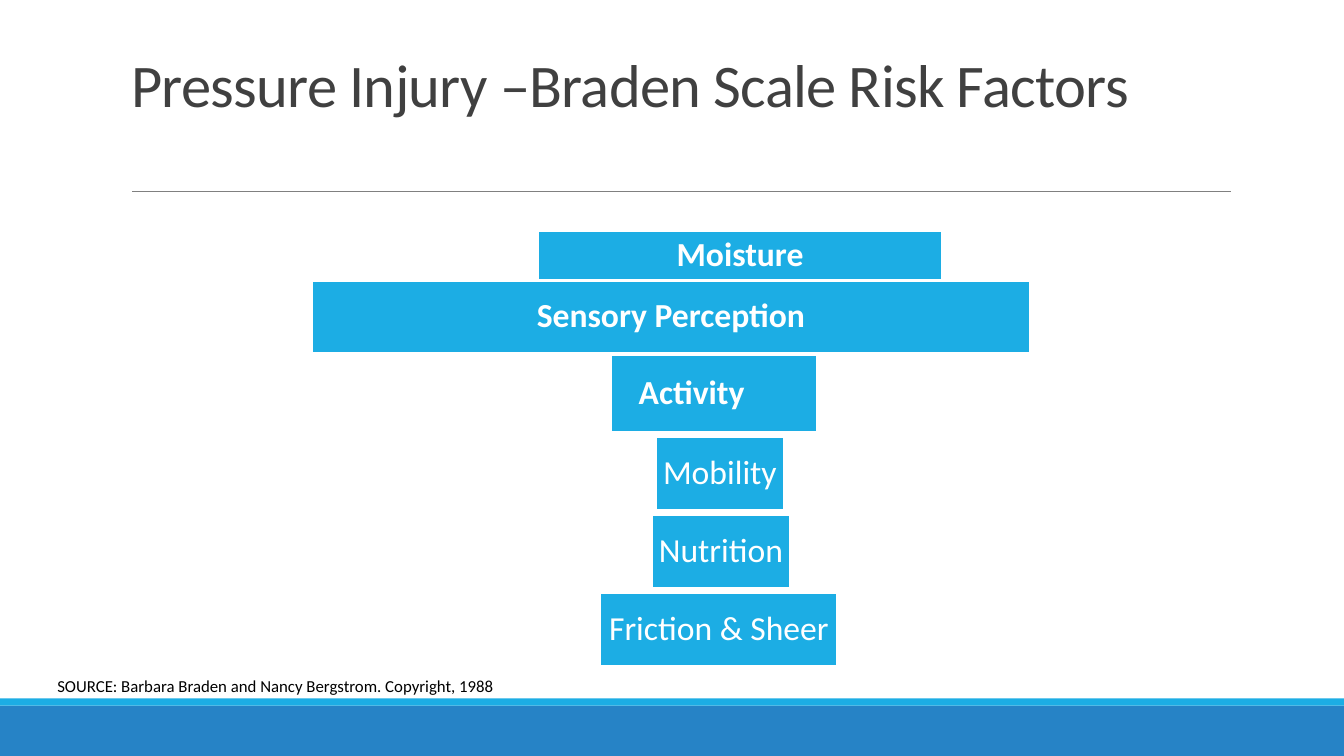
"""Build the Braden Scale risk factor slide."""
from dataclasses import dataclass

import pptx
import pptx.dml.color
import pptx.enum.shapes
import pptx.enum.text
import pptx.oxml
import pptx.oxml.ns
import pptx.util

Inches = pptx.util.Inches
Pt = pptx.util.Pt
RGB = pptx.dml.color.RGBColor.from_string
ALIGN = pptx.enum.text.PP_ALIGN
ANCHOR = pptx.enum.text.MSO_ANCHOR
RECT = pptx.enum.shapes.MSO_SHAPE.RECTANGLE


@dataclass(frozen=True)
class Theme:
    font: str = "Calibri"
    accent: str = "1CADE4"
    band: str = "2683C6"
    rule: str = "808080"
    title: str = "404040"
    white: str = "FFFFFF"
    black: str = "000000"
    title_size: float = 43.2
    factor_size: float = 24
    source_size: float = 12


@dataclass(frozen=True)
class Factor:
    label: str
    left: float
    top: float
    width: float
    height: float = 0.73
    bold: bool = False


@dataclass(frozen=True)
class Band:
    top: float
    height: float
    color: str


THEME = Theme()
BANDS = [Band(7, 0.5, THEME.band), Band(6.93, 0.07, THEME.accent)]
FACTORS = [
    Factor("Moisture", 5.33, 2.29, 4.02, 0.5, bold=True),
    Factor("Sensory Perception", 3.09, 2.78, 7.13, bold=True),
    Factor("Activity\t", 6.06, 3.52, 2.05, 0.77, bold=True),
    Factor("Mobility", 6.5, 4.33, 1.28),
    Factor("Nutrition", 6.46, 5.11, 1.38),
    Factor("Friction & Sheer", 5.95, 5.88, 2.36),
]


def apply(target: object, values: dict) -> None:
    for name, value in values.items():
        setattr(target, name, value)


def write(sp, text: str, size: float, color: str, frame: dict, para: dict, bold: bool = False):
    tf = sp.text_frame
    apply(tf, {"word_wrap": True, **frame})
    p = tf.paragraphs[0]
    apply(p, para)
    r = p.add_run()
    r.text = text
    apply(r.font, {"name": THEME.font, "size": Pt(size), "bold": bold})
    r.font.color.rgb = RGB(color)
    return r


def add_rect(slide, left: float, top: float, width: float, height: float, color: str):
    sp = slide.shapes.add_shape(RECT, Inches(left), Inches(top), Inches(width), Inches(height))
    sp.shadow.inherit = False
    sp.fill.solid()
    sp.fill.fore_color.rgb = RGB(color)
    sp.line.fill.background()
    return sp


def add_rule(slide) -> None:
    line = slide.shapes.add_connector(
        pptx.enum.shapes.MSO_CONNECTOR.STRAIGHT, Inches(1.31), Inches(1.9), Inches(12.21), Inches(1.9))
    line.line.color.rgb = RGB(THEME.rule)
    line.line.width = Pt(0.5)
    line._element.spPr.append(pptx.oxml.parse_xml(f"<a:effectLst {pptx.oxml.ns.nsdecls('a')}/>"))


def add_title(slide) -> None:
    sp = slide.shapes.title
    apply(sp, {"left": Inches(1.2), "top": Inches(0.31), "width": Inches(11), "height": Inches(0.93)})
    frame = {"vertical_anchor": ANCHOR.BOTTOM, "auto_size": pptx.enum.text.MSO_AUTO_SIZE.NONE}
    r = write(sp, "Pressure Injury –Braden Scale Risk Factors", THEME.title_size, THEME.title,
              frame, {"alignment": ALIGN.LEFT, "line_spacing": 0.85})
    r.font._element.set("spc", "-50")


def add_factor(slide, factor: Factor) -> None:
    sp = add_rect(slide, factor.left, factor.top, factor.width, factor.height, THEME.accent)
    sp.line.color.rgb = RGB(THEME.white)
    sp.line.width = Pt(2)
    sides = ("left", "right", "top", "bottom")
    frame = {f"margin_{side}": Inches(0.07) for side in sides}
    write(sp, factor.label, THEME.factor_size, THEME.white,
          {"vertical_anchor": ANCHOR.MIDDLE, **frame},
          {"alignment": ALIGN.CENTER, "line_spacing": 0.9}, factor.bold)


def add_source(slide) -> None:
    sp = slide.shapes.add_textbox(Inches(0.47), Inches(6.65), Inches(10.56), Inches(0.3))
    write(sp, "SOURCE: Barbara Braden and Nancy Bergstrom. Copyright, 1988",
          THEME.source_size, THEME.black, {}, {"alignment": ALIGN.LEFT})


def main() -> None:
    prs = pptx.Presentation()
    apply(prs, {"slide_width": Inches(13.33), "slide_height": Inches(7.5)})
    slide = prs.slides.add_slide(prs.slide_layouts[5])
    for band in BANDS:
        add_rect(slide, 0, band.top, 13.33, band.height, band.color)
    add_rule(slide)
    add_title(slide)
    for factor in FACTORS:
        add_factor(slide, factor)
    add_source(slide)
    prs.save("out.pptx")


if __name__ == "__main__":
    main()
